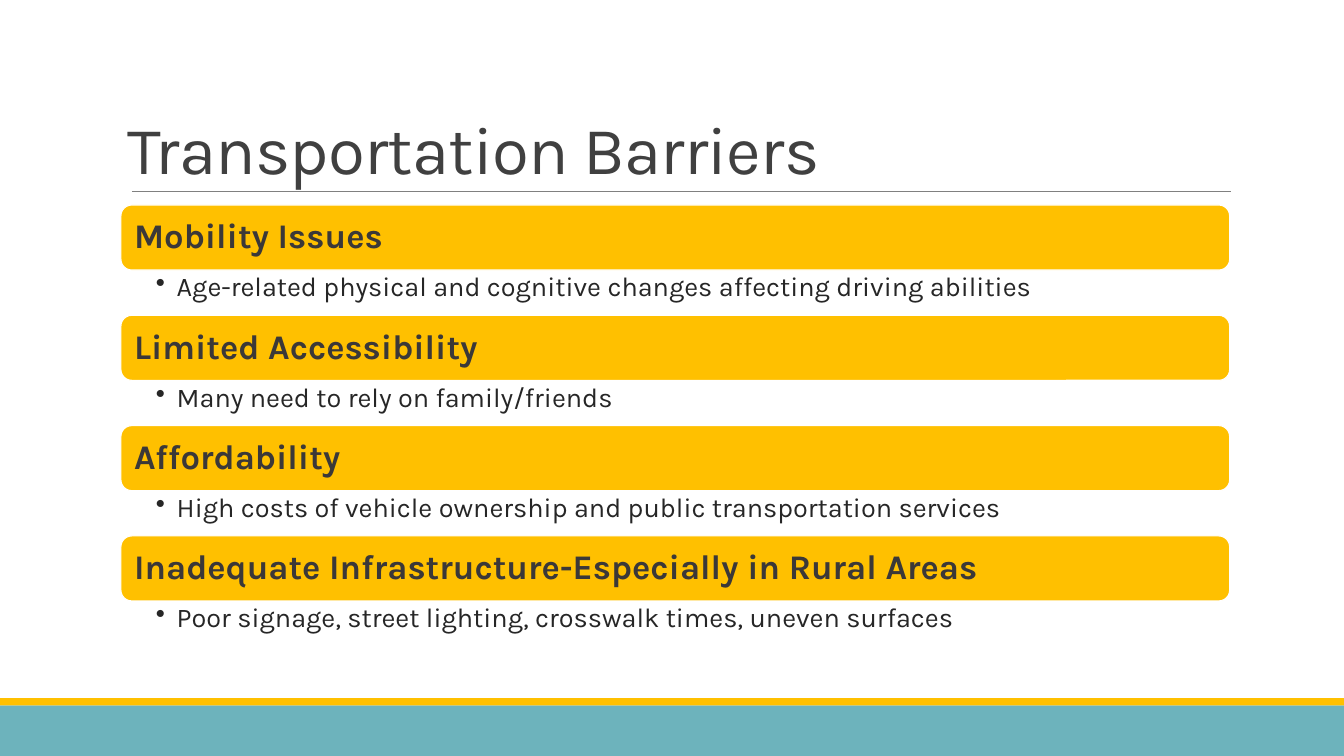
"""Build the Transportation Barriers slide."""
from lxml import etree
from pptx import Presentation
from pptx import util as u
from pptx.dml.color import RGBColor
from pptx.enum import shapes, text
from pptx.oxml import ns

COLOURS = {
    "teal": "6DB3BC",
    "gold": "FFC000",
    "white": "FFFFFF",
    "rule": "808080",
    "title": "404040",
    "heading": "3B3838",
    "detail": "262626",
}
BARRIERS = [
    ("Mobility Issues",
     "Age-related physical and cognitive changes affecting driving abilities"),
    ("Limited Accessibility", "Many need to rely on family/friends"),
    ("Affordability",
     "High costs of vehicle ownership and public transportation services"),
    ("Inadequate Infrastructure-Especially in Rural Areas",
     "Poor signage, street lighting, crosswalk times, uneven surfaces"),
]
SLIDE_W, SLIDE_H = 50.8, 28.58
LEFT, WIDTH = 4.57, 41.91
FIRST_TOP, BAR_H, DETAIL_H = 7.75, 2.46, 1.71


def colour(name):
    return RGBColor.from_string(COLOURS[name])


def add_panel(slide, kind, box, fill, outline=None):
    panel = slide.shapes.add_shape(kind, *map(u.Cm, box))
    panel.shadow.inherit = False
    panel.fill.solid()
    panel.fill.fore_color.rgb = colour(fill)
    if outline:
        panel.line.color.rgb = colour(outline)
        panel.line.width = u.Pt(1.25)
    else:
        panel.line.fill.background()
    return panel


def write(frame, wording, size, ink, insets, anchor, spacing, bold=False):
    frame.word_wrap = True
    frame.vertical_anchor = anchor
    (frame.margin_left, frame.margin_top,
     frame.margin_right, frame.margin_bottom) = map(u.Cm, insets)
    frame.text = wording
    line = frame.paragraphs[0]
    line.alignment = text.PP_ALIGN.LEFT
    line.line_spacing = spacing
    font = line.runs[0].font
    font.name, font.size, font.bold = "Karla", u.Pt(size), bold
    font.color.rgb = colour(ink)
    return line


def add_bullet(line, indent):
    props = line._p.get_or_add_pPr()
    props.set("marL", str(u.Cm(indent)))
    props.set("indent", str(-u.Cm(indent)))
    etree.SubElement(props, ns.qn("a:buChar")).set("char", "•")


def add_title(slide, wording):
    title = slide.shapes.add_textbox(*map(u.Cm, (LEFT, 1.19, WIDTH, 6.05)))
    line = write(title.text_frame, wording, 72, "title",
                 (0.25, 0.13, 0.25, 0.13), text.MSO_ANCHOR.BOTTOM, 0.85)
    line.runs[0].font._element.set("spc", "-80")


def add_rule(slide, start, end, y):
    rule = slide.shapes.add_connector(
        shapes.MSO_CONNECTOR.STRAIGHT, *map(u.Cm, (start, y, end, y)))
    rule.line.color.rgb = colour("rule")
    rule.line.width = u.Pt(0.5)
    etree.SubElement(rule._element.spPr, ns.qn("a:effectLst"))


def add_barrier(slide, top, heading, detail):
    bar = add_panel(slide, shapes.MSO_SHAPE.ROUNDED_RECTANGLE,
                    (LEFT, top, WIDTH, BAR_H), "gold", "white")
    write(bar.text_frame, heading, 37, "heading", (0.38,) * 4,
          text.MSO_ANCHOR.MIDDLE, 0.9, bold=True)
    note = slide.shapes.add_textbox(
        *map(u.Cm, (LEFT, top + BAR_H, WIDTH, DETAIL_H)))
    line = write(note.text_frame, detail, 29, "detail",
                 (1.32, 0.13, 0.74, 0.13), text.MSO_ANCHOR.TOP, 0.9)
    add_bullet(line, 0.79)


def main():
    deck = Presentation()
    deck.slide_width, deck.slide_height = u.Cm(SLIDE_W), u.Cm(SLIDE_H)
    slide = deck.slides.add_slide(deck.slide_layouts[6])
    for top, height, fill in ((26.67, 1.91, "teal"), (26.39, 0.28, "gold")):
        add_panel(slide, shapes.MSO_SHAPE.RECTANGLE,
                  (0, top, SLIDE_W, height), fill)
    add_rule(slide, 4.98, 46.51, 7.24)
    add_title(slide, "Transportation Barriers")
    for row, (heading, detail) in enumerate(BARRIERS):
        add_barrier(slide, FIRST_TOP + row * (BAR_H + DETAIL_H),
                    heading, detail)
    deck.save("out.pptx")


if __name__ == "__main__":
    main()
